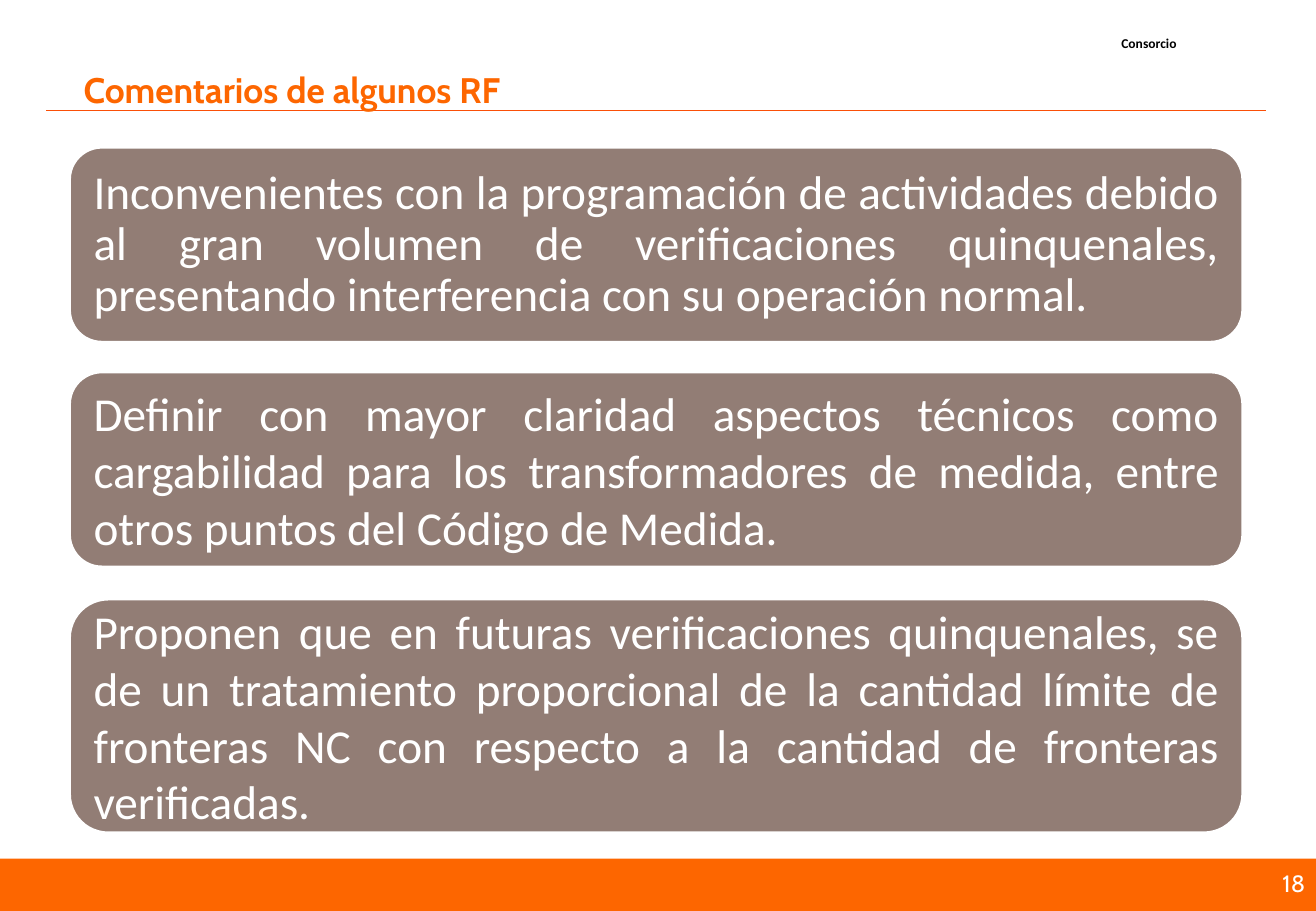
from dataclasses import dataclass

from lxml import etree
from pptx import Presentation
from pptx import util as u
from pptx.dml.color import RGBColor
from pptx.enum import shapes, text
from pptx.oxml.ns import qn

ORANGE, RULE, TAUPE = "FD6600", "FA4F08", "927D75"
WHITE, BLACK = "FFFFFF", "000000"


@dataclass
class Label:
    words: str
    left: float
    top: float
    width: float
    height: float
    font: str
    size: int
    color: str
    bold: bool = False
    align: text.PP_ALIGN = text.PP_ALIGN.LEFT
    anchor: text.MSO_ANCHOR = text.MSO_ANCHOR.TOP


@dataclass
class Comment:
    words: str
    top: float
    height: float
    spacing: float = 1.0


LABELS = [
    Label("Comentarios de algunos RF", 0.59, 0.51, 7.17, 0.4, "Cabin", 21, ORANGE, bold=True),
    Label("18", 8.31, 7.07, 2.53, 0.4, "Cabin", 14, WHITE,
          align=text.PP_ALIGN.RIGHT, anchor=text.MSO_ANCHOR.MIDDLE),
    Label("Consorcio", 9.13, 0.24, 0.67, 0.24, "Calibri", 8, BLACK, bold=True),
]

COMMENTS = [
    Comment("Inconvenientes con la programación de actividades debido al gran volumen de "
            "verificaciones quinquenales, presentando interferencia con su operación normal.",
            1.21, 1.61, spacing=0.9),
    Comment("Definir con mayor claridad aspectos técnicos como cargabilidad para los "
            "transformadores de medida, entre otros puntos del Código de Medida.",
            3.06, 1.61),
    Comment("Proponen que en futuras verificaciones quinquenales, se de un tratamiento "
            "proporcional de la cantidad límite de fronteras NC con respecto a la cantidad "
            "de fronteras verificadas.",
            4.93, 1.93),
]


def rgb(color: str) -> RGBColor:
    return RGBColor.from_string(color)


def style_font(para, name: str, size: int, color: str, bold: bool = False) -> None:
    para.font.name = name
    para.font.size = u.Pt(size)
    para.font.bold = bold
    para.font.color.rgb = rgb(color)


def add_block(page, kind, left: float, top: float, width: float, height: float, color: str):
    block = page.shapes.add_shape(kind, u.Inches(left), u.Inches(top),
                                  u.Inches(width), u.Inches(height))
    block.shadow.inherit = False
    block.fill.solid()
    block.fill.fore_color.rgb = rgb(color)
    block.line.fill.background()
    return block


def add_rule(page) -> None:
    y = u.Inches(0.91)
    rule = page.shapes.add_connector(shapes.MSO_CONNECTOR.STRAIGHT,
                                     u.Inches(0.38), y, u.Inches(10.42), y)
    rule.line.color.rgb = rgb(RULE)
    rule.line.width = u.Pt(0.75)
    etree.SubElement(rule._element.spPr, qn("a:effectLst"))


def add_label(page, label: Label) -> None:
    box = page.shapes.add_textbox(u.Inches(label.left), u.Inches(label.top),
                                  u.Inches(label.width), u.Inches(label.height))
    frame = box.text_frame
    frame.word_wrap = True
    frame.vertical_anchor = label.anchor
    para = frame.paragraphs[0]
    para.text = label.words
    para.alignment = label.align
    style_font(para, label.font, label.size, label.color, label.bold)


def add_comment(page, comment: Comment) -> None:
    card = add_block(page, shapes.MSO_SHAPE.ROUNDED_RECTANGLE,
                     0.57, comment.top, 9.66, comment.height, TAUPE)
    card.line.color.rgb = rgb(WHITE)
    card.line.width = u.Pt(2)
    frame = card.text_frame
    frame.word_wrap = True
    frame.vertical_anchor = text.MSO_ANCHOR.MIDDLE
    # The rounded corners already inset the text of the card
    corner_inset = 0.29 * 0.16667 * comment.height
    frame.margin_left = frame.margin_right = u.Inches(0.2 - corner_inset)
    frame.margin_top = frame.margin_bottom = u.Inches(0.05)
    para = frame.paragraphs[0]
    para.text = comment.words
    para.alignment = text.PP_ALIGN.JUSTIFY
    para.line_spacing = comment.spacing
    style_font(para, "Calibri", 28, WHITE)


def main() -> None:
    deck = Presentation()
    deck.slide_width, deck.slide_height = u.Inches(10.83), u.Inches(7.5)
    page = deck.slides.add_slide(deck.slide_layouts[6])

    # Footer band and title rule
    add_block(page, shapes.MSO_SHAPE.RECTANGLE, 0, 7.07, 10.83, 0.43, ORANGE)
    add_rule(page)

    # Title, page number and header note
    for label in LABELS:
        add_label(page, label)

    # Comment cards
    for comment in COMMENTS:
        add_comment(page, comment)

    deck.save("out.pptx")


if __name__ == "__main__":
    main()
